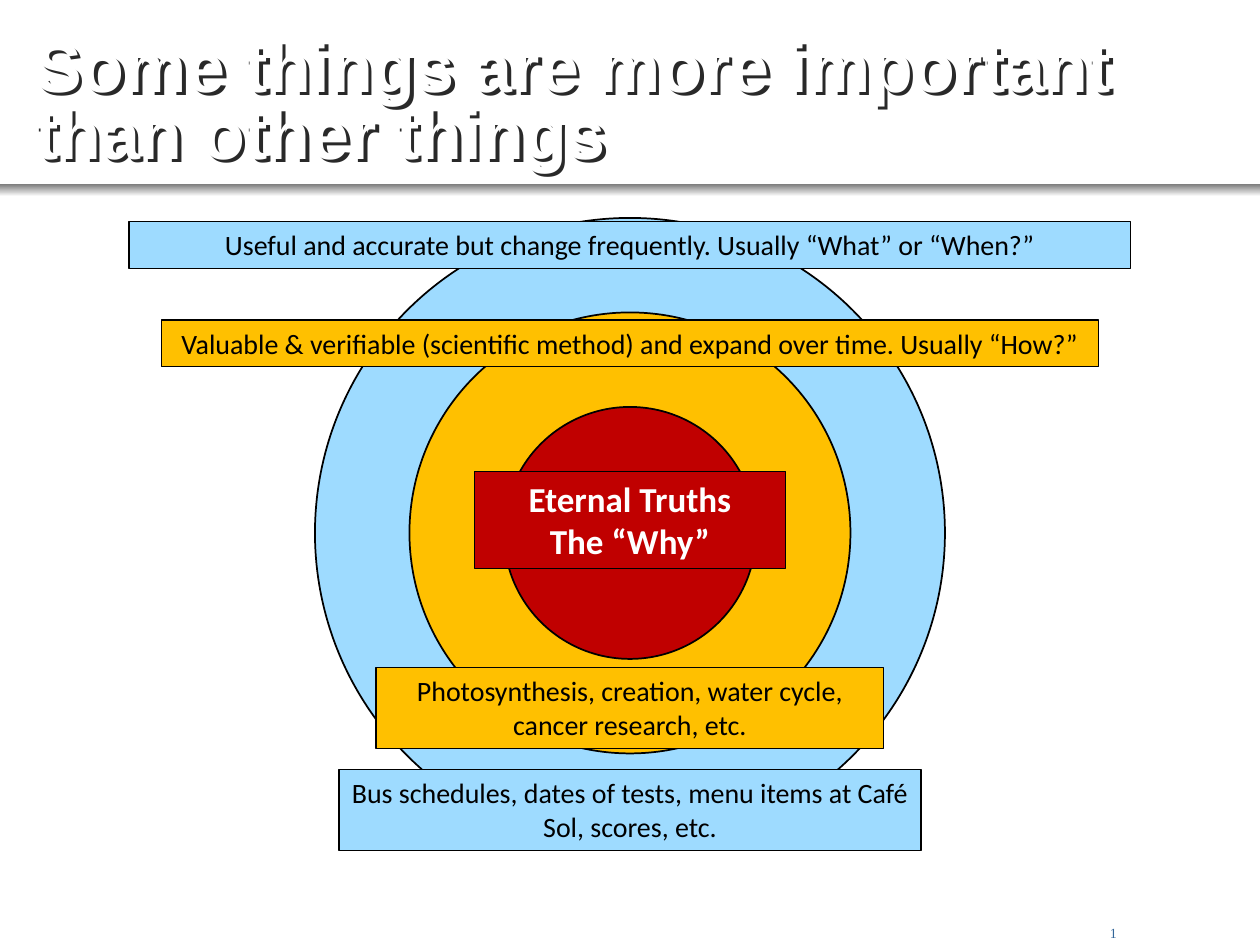
from dataclasses import dataclass

from lxml import etree
from pptx import Presentation
from pptx.dml.color import RGBColor
from pptx.enum.shapes import MSO_SHAPE
from pptx.enum.text import MSO_ANCHOR, MSO_AUTO_SIZE, PP_ALIGN
from pptx.oxml.ns import qn
from pptx.util import Inches, Pt

RECT, OVAL = MSO_SHAPE.RECTANGLE, MSO_SHAPE.OVAL
LEFT, CENTER = PP_ALIGN.LEFT, PP_ALIGN.CENTER
TOP, BOTTOM = MSO_ANCHOR.TOP, MSO_ANCHOR.BOTTOM
FIT = MSO_AUTO_SIZE.SHAPE_TO_FIT_TEXT


@dataclass(frozen=True)
class Theme:
    white: str = "FFFFFF"
    black: str = "000000"
    shadow: str = "292929"
    grey: str = "797979"
    blue: str = "9EDBFF"
    gold: str = "FFC000"
    red: str = "C00000"
    number: str = "336699"
    title_font: str = "Arial"
    body_font: str = "Calibri"
    number_font: str = "Times New Roman"
    title_size: int = 40
    core_size: int = 20
    body_size: int = 16
    number_size: int = 8


T = Theme()
TITLE = dict(name=T.title_font, size=Pt(T.title_size), bold=True, color=T.white)
BODY = dict(name=T.body_font, size=Pt(T.body_size), bold=False, color=T.black)
CORE = dict(name=T.body_font, size=Pt(T.core_size), bold=True, color=T.white)
NUMBER = dict(name=T.number_font, size=Pt(T.number_size), bold=False, color=T.number)

RINGS = [(5, T.blue), (3.5, T.gold), (2, T.red)]
LABELS = [  # top, width, height, fill, format, lines
    (1.76, 7.95, 0.37, T.blue, BODY,
     ["Useful and accurate but change frequently. Usually “What” or “When?”"]),
    (2.54, 7.44, 0.37, T.gold, BODY,
     ["Valuable & verifiable (scientific method) and expand over time. Usually “How?”"]),
    (3.74, 2.47, 0.77, T.red, CORE, ["Eternal Truths", "The “Why”"]),
    (5.3, 4.03, 0.64, T.gold, BODY,
     ["Photosynthesis, creation, water cycle, cancer research, etc."]),
    (6.11, 4.62, 0.64, T.blue, BODY,
     ["Bus schedules, dates of tests, menu items at Café Sol, scores, etc."]),
]


def write(sp, lines, fmt, align=LEFT, anchor=TOP):
    tf = sp.text_frame
    tf.word_wrap = True
    tf.vertical_anchor = anchor
    for i, line in enumerate(lines):
        p = tf.paragraphs[0] if i == 0 else tf.add_paragraph()
        p.alignment = align
        r = p.add_run()
        r.text = line
        for key, value in fmt.items():
            if key == "color":
                r.font.color.rgb = RGBColor.from_string(value)
            else:
                setattr(r.font, key, value)
    return tf


def add_shape(slide, kind, box, fill, line_width):
    sp = slide.shapes.add_shape(kind, *map(Inches, box))
    sp.shadow.inherit = False
    sp.fill.solid()
    sp.fill.fore_color.rgb = RGBColor.from_string(fill)
    sp.line.color.rgb = RGBColor.from_string(T.black)
    sp.line.width = Pt(line_width)
    return sp


def add_shadow(sp):
    """Cast a dark shadow to the lower right; an unfilled box casts it from its text."""
    effects = etree.SubElement(sp.element.spPr, qn("a:effectLst"))
    shadow = etree.SubElement(effects, qn("a:outerShdw"), dist="38100", dir="2700000",
                              algn="ctr", rotWithShape="0")
    etree.SubElement(shadow, qn("a:srgbClr"), val=T.shadow)


def add_title(slide, box, text):
    sp = slide.shapes.add_textbox(*map(Inches, box))
    add_shadow(sp)
    write(sp, [text], TITLE, anchor=BOTTOM).paragraphs[0].line_spacing = 0.8


def add_divider(slide, box):
    sp = slide.shapes.add_shape(RECT, *map(Inches, box))
    sp.shadow.inherit = False
    sp.line.fill.background()
    sp.fill.gradient()
    sp.fill.gradient_angle = 270
    for stop, color, position in zip(sp.fill.gradient_stops, (T.grey, T.white), (0, 1)):
        stop.color.rgb = RGBColor.from_string(color)
        stop.position = position


def add_target(slide, box):
    """Concentric rings sharing the centre of the box."""
    left, top, width, height = box
    for size, fill in RINGS:
        ring = (left + (width - size) / 2, top + (height - size) / 2, size, size)
        add_shape(slide, OVAL, ring, fill, 1)


def add_labels(slide, center):
    for top, width, height, fill, fmt, lines in LABELS:
        box = (center - width / 2, top, width, height)
        sp = add_shape(slide, RECT, box, fill, 0.75)
        write(sp, lines, fmt, CENTER).auto_size = FIT


def add_page_number(slide, box, number):
    write(slide.shapes.add_textbox(*map(Inches, box)), [number], NUMBER)


def main():
    prs = Presentation()
    prs.slide_width, prs.slide_height = Inches(10), Inches(7.5)
    slide = prs.slides.add_slide(prs.slide_layouts[6])
    add_divider(slide, (0, 1.46, 10, 0.1))
    add_title(slide, (0.18, 0.18, 9.55, 1.24),
              "Some things are more important than other things")
    add_page_number(slide, (8.71, 7.29, 1.29, 0.17), "1")
    add_target(slide, (2.5, 1.73, 5, 5))
    add_labels(slide, 5)
    prs.save("out.pptx")


if __name__ == "__main__":
    main()
